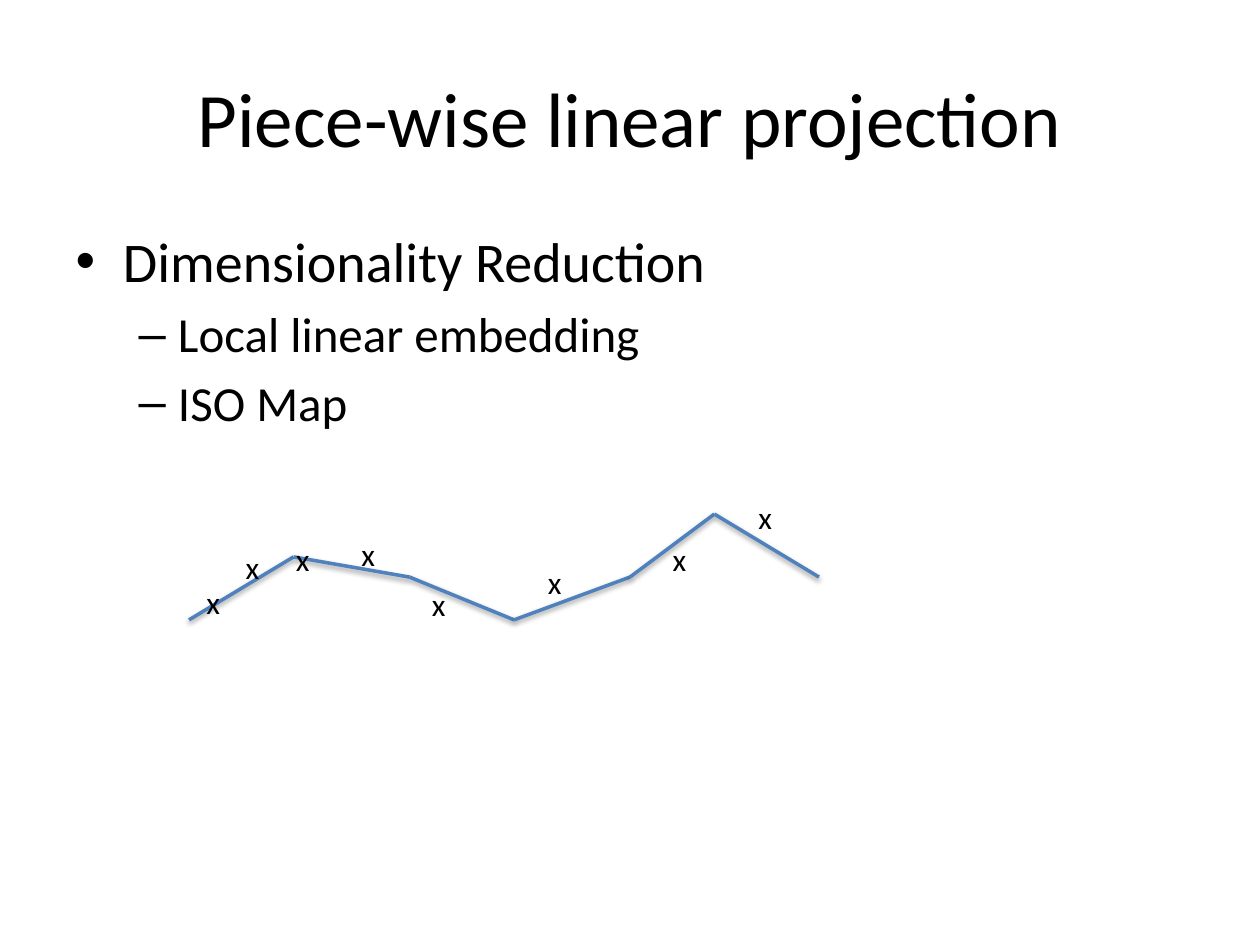
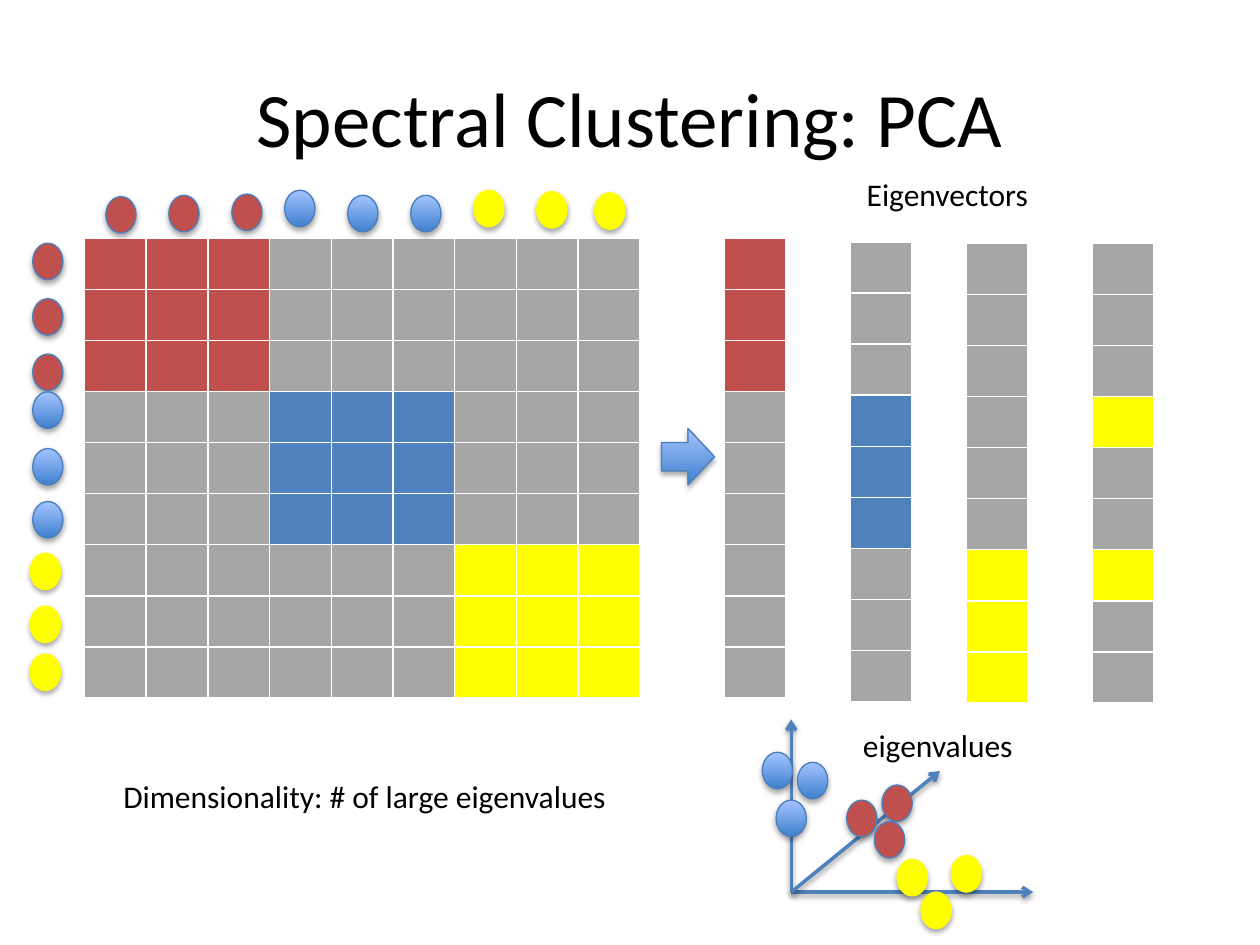
from itertools import pairwise

from lxml.etree import SubElement
from pptx import Presentation
from pptx.dml.color import RGBColor
from pptx.enum.shapes import MSO_CONNECTOR as Connector, MSO_SHAPE as Shape
from pptx.enum.text import MSO_ANCHOR as Anchor, PP_ALIGN as Align
from pptx.oxml.ns import qn
from pptx.util import Inches, Pt

BLACK = RGBColor(0x00, 0x00, 0x00)
RED = RGBColor(0xC0, 0x50, 0x4D)
BLUE = RGBColor(0x4F, 0x81, 0xBD)
YELLOW = RGBColor(0xFF, 0xFF, 0x00)
GRAY = RGBColor(0xA6, 0xA6, 0xA6)
OUTLINE = RGBColor(0x4B, 0x7E, 0xBC)
DEEP_BLUE = RGBColor(0x3F, 0x80, 0xCE)
LIGHT_BLUE = RGBColor(0xA4, 0xC4, 0xFF)
FONT = "Calibri"

CELL_COLORS = {"R": RED, "B": BLUE, "Y": YELLOW, ".": GRAY}
CELL_W, CELL_H = 0.49, 0.4
DOT_W, DOT_H = 0.24, 0.29
MARK_W, MARK_H = 0.41, 0.69
LABEL_H = 0.4

PROJECTION_TITLE = "Piece-wise linear projection"
OUTLINE_ITEMS = [
    (0, "Dimensionality Reduction"),
    (1, "Local linear embedding"),
    (1, "ISO Map"),
]
CURVE = [(1.5, 4.92), (2.33, 4.42), (3.25, 4.58), (4.08, 4.92),
         (5, 4.58), (5.67, 4.08), (6.5, 4.58)]
SAMPLES = [(1.54, 4.58), (1.85, 4.3), (2.25, 4.24), (2.77, 4.2),
           (3.33, 4.59), (4.25, 4.42), (5.24, 4.24), (5.92, 3.9)]

CLUSTERING_TITLE = "Spectral Clustering: PCA"
AFFINITY = ["RRR......"] * 3 + ["...BBB..."] * 3 + ["......YYY"] * 3
AFFINITY_AT = (0.67, 1.89)
EIGENVECTORS = [
    ((5.75, 1.89), "RRR......"),
    ((6.75, 1.92), "...BBB..."),
    ((7.67, 1.93), "......YYY"),
    ((8.67, 1.93), "...Y..Y.."),
]
ROW_DOTS = {
    "R": [(0.26, 1.93), (0.26, 2.37), (0.26, 2.81)],
    "B": [(0.26, 3.11), (0.26, 3.56), (0.26, 3.98)],
    "Y": [(0.24, 4.39), (0.24, 4.81), (0.24, 5.19)],
}
COLUMN_DOTS = {
    "R": [(0.84, 1.56), (1.34, 1.55), (1.84, 1.54)],
    "B": [(2.26, 1.51), (2.76, 1.55), (3.26, 1.55)],
    "Y": [(3.76, 1.51), (4.26, 1.52), (4.72, 1.53)],
}
PROJECTED_DOTS = {
    "B": [(6.05, 5.97), (6.33, 6.05), (6.16, 6.35)],
    "R": [(7, 6.23), (6.72, 6.35), (6.94, 6.52)],
    "Y": [(7.55, 6.79), (7.31, 7.08), (7.12, 6.82)],
}
LABELS = [
    ("Eigenvectors", 6.78, 1.34, 1.51),
    ("eigenvalues", 6.75, 5.71, 1.41),
    ("Dimensionality: # of large eigenvalues", 0.88, 6.12, 4.09),
]
ORIGIN = (6.28, 7.08)
AXIS_TIPS = [(8.2, 7.08), (6.28, 5.71), (7.46, 6.12)]
ARROW_BOX = (5.25, 3.4, 0.42, 0.45)


def inches(*lengths):
    return [Inches(length) for length in lengths]


def place(part, *box):
    part.left, part.top, part.width, part.height = inches(*box)


def style_paragraph(paragraph, size):
    for run in paragraph.runs:
        run.font.name = FONT
        run.font.size = Pt(size)
        run.font.color.rgb = BLACK


def titled_slide(deck, layout, text):
    slide = deck.slides.add_slide(layout)
    title = slide.shapes.title
    place(title, 0.5, 0.3, 9, 1.25)
    title.text_frame.text = text
    title.text_frame.vertical_anchor = Anchor.MIDDLE
    heading = title.text_frame.paragraphs[0]
    heading.alignment = Align.CENTER
    style_paragraph(heading, 44)
    return slide


def add_label(slide, text, x, y, width, height=LABEL_H, wrap=False):
    label = slide.shapes.add_textbox(*inches(x, y, width, height))
    label.text_frame.word_wrap = wrap
    label.text_frame.text = text
    style_paragraph(label.text_frame.paragraphs[0], 18)


def cast_shadow(effects, distance, opacity):
    shadow = SubElement(effects, qn("a:outerShdw"), blurRad="40000",
                        dist=str(distance), dir="5400000", rotWithShape="0")
    color = SubElement(shadow, qn("a:srgbClr"), val=str(BLACK))
    SubElement(color, qn("a:alpha"), val=str(opacity * 1000))


def add_line(slide, start, end, arrow=False):
    line = slide.shapes.add_connector(Connector.STRAIGHT, *inches(*start, *end))
    line.line.color.rgb = BLUE
    line.line.width = Pt(2)
    if arrow:
        SubElement(line.line._get_or_add_ln(), qn("a:tailEnd"), type="arrow")
    cast_shadow(SubElement(line._element.spPr, qn("a:effectLst")), 20000, 38)


def add_glossy(slide, kind, box, code):
    part = slide.shapes.add_shape(kind, *inches(*box))
    if code == "B":
        part.fill.gradient()
        part.fill.gradient_angle = 90
        for stop, color in zip(part.fill.gradient_stops, (DEEP_BLUE, LIGHT_BLUE)):
            stop.color.rgb = color
    else:
        part.fill.solid()
        part.fill.fore_color.rgb = CELL_COLORS[code]
    part.line.color.rgb = YELLOW if code == "Y" else OUTLINE
    part.line.width = Pt(0.75)
    part.shadow.inherit = False
    cast_shadow(part._element.spPr.find(qn("a:effectLst")), 23000, 35)


def add_dots(slide, clusters):
    for code, corners in clusters.items():
        for corner in corners:
            add_glossy(slide, Shape.OVAL, (*corner, DOT_W, DOT_H), code)


def add_color_grid(slide, corner, rows):
    height, width = len(rows), len(rows[0])
    grid = slide.shapes.add_table(
        height, width, *inches(*corner, width * CELL_W, height * CELL_H)).table
    for r, codes in enumerate(rows):
        for c, code in enumerate(codes):
            fill = grid.cell(r, c).fill
            fill.solid()
            fill.fore_color.rgb = CELL_COLORS[code]


def build_projection(deck):
    slide = titled_slide(deck, deck.slide_layouts[1], PROJECTION_TITLE)
    body = slide.placeholders[1]
    place(body, 0.5, 1.75, 9, 2.08)
    body.text_frame.text = "\n".join(text for _, text in OUTLINE_ITEMS)
    for paragraph, (level, _) in zip(body.text_frame.paragraphs, OUTLINE_ITEMS):
        paragraph.level = level
        style_paragraph(paragraph, 32 - 4 * level)
    for start, end in pairwise(CURVE):
        add_line(slide, start, end)
    for x, y in SAMPLES:
        add_label(slide, "x", x, y, MARK_W, MARK_H, wrap=True)


def build_clustering(deck):
    slide = titled_slide(deck, deck.slide_layouts[5], CLUSTERING_TITLE)
    add_color_grid(slide, AFFINITY_AT, AFFINITY)
    add_dots(slide, ROW_DOTS)
    add_dots(slide, COLUMN_DOTS)
    for corner, codes in EIGENVECTORS:
        add_color_grid(slide, corner, list(codes))
    for label in LABELS:
        add_label(slide, *label)
    add_glossy(slide, Shape.RIGHT_ARROW, ARROW_BOX, "B")
    for tip in AXIS_TIPS:
        add_line(slide, ORIGIN, tip, arrow=True)
    add_dots(slide, PROJECTED_DOTS)


def main():
    deck = Presentation()
    deck.slide_width, deck.slide_height = inches(10, 7.5)
    build_projection(deck)
    build_clustering(deck)
    deck.save("out.pptx")


if __name__ == "__main__":
    main()
